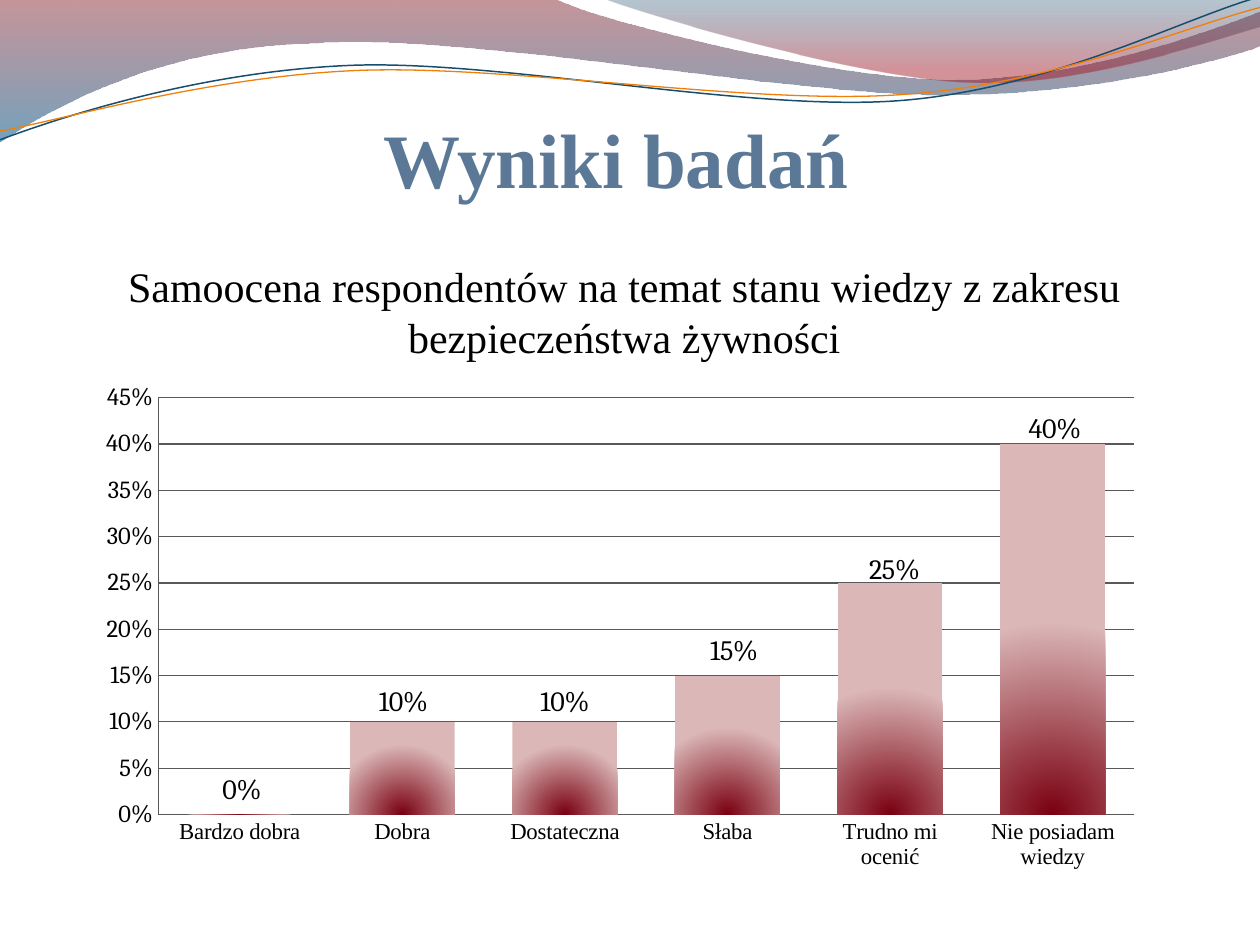
"""Build the survey results slide with its wave header and column chart."""
from lxml.etree import SubElement
from pptx import Presentation
from pptx.chart.data import CategoryChartData
from pptx.dml.color import RGBColor
from pptx.enum.chart import XL_CHART_TYPE as ChartType, XL_LABEL_POSITION as LabelPos
from pptx.enum.chart import XL_TICK_MARK as TickMark
from pptx.enum.text import MSO_ANCHOR as Anchor, PP_ALIGN as Align
from pptx.oxml import parse_xml
from pptx.oxml.ns import nsdecls, qn
from pptx.util import Inches, Pt

SERIF = "Times New Roman"
TITLE = "Wyniki badań"
QUESTION = "Samoocena respondentów na temat stanu wiedzy z zakresu bezpieczeństwa żywności"
ANSWERS = [
    ("Bardzo dobra", 0, (0.002, -0.088)),
    ("Dobra", 0.1, (0.001, -0.08)),
    ("Dostateczna", 0.1, (0, -0.08)),
    ("Słaba", 0.15, (0.006, -0.089)),
    ("Trudno mi ocenić", 0.25, (0.004, -0.066)),
    ("Nie posiadam wiedzy", 0.4, (0.002, -0.069)),
]
PLOT_AREA = {"x": 0.069, "y": 0.049, "w": 0.911, "h": 0.823}
BAR_STOPS = [(0, "7A0010", 100), (1, "DBB7B8", 100)]
BANDS = [
    ([(0, 0), (4.4, -0.01), (4.76, 0.17, 6.64, 0.63, 7.58, 0.63),
      (8.53, 0.63, 9.58, 0.26, 10, 0.09), (10.01, 0.36),
      (9.83, 0.44, 8.7, 0.76, 7.46, 0.75), (6.22, 0.75, 3.82, 0.28, 2.57, 0.34),
      (1.29, 0.36, 0.46, 0.83, -0.01, 1.13), (0, 0)],
     [(0, "7E1621", 45), (1, "005689", 55)]),
    ([(4.79, -0.01), (5.09, 0.11, 6.82, 0.62, 7.69, 0.65),
      (8.56, 0.69, 9.61, 0.32, 10, 0.21), (10, 0), (4.79, -0.01)],
     [(0, "094467", 30), (0.8, "A10F1F", 45)]),
]
STRANDS = [
    ([(0, 1.11), (0.48, 0.93, 1.58, 0.57, 2.77, 0.52),
      (3.95, 0.47, 5.93, 0.89, 7.13, 0.8), (8.33, 0.71, 9.38, 0.15, 9.98, -0.02)],
     "184E6D", 0.85),
    ([(0, 1.04), (0.47, 0.96, 1.64, 0.61, 2.83, 0.56),
      (4.03, 0.51, 5.97, 0.84, 7.17, 0.75), (8.36, 0.67, 9.41, 0.21, 10, 0.06)],
     "F07F09", 0.75),
]


def rgb(code):
    return RGBColor.from_string(code)


def set_font(font, size, face, color="000000", bold=False):
    font.size, font.name, font.bold = Pt(size), face, bold
    font.color.rgb = rgb(color)


def add_wave(slide, outline, close):
    start, *knots = [(Inches(part[i]), Inches(part[i + 1]))
                     for part in outline for i in range(0, len(part), 2)]
    builder = slide.shapes.build_freeform(*start)
    builder.add_line_segments(knots, close=close)
    wave = builder.convert_to_shape()
    wave.shadow.inherit = False
    segments = iter(list(wave.element.iter(qn("a:lnTo"))))
    for part in outline[1:]:
        segment = next(segments)
        if len(part) == 6:
            segment.tag = qn("a:cubicBezTo")
            for follower in (next(segments), next(segments)):
                segment.append(follower[0])
                follower.getparent().remove(follower)
    return wave


def set_gradient(fill, stops):
    fill.gradient()
    fill.gradient_angle = 270
    for stop, (position, color, opacity) in zip(fill.gradient_stops, stops):
        stop.position = position
        stop.color.rgb = rgb(color)


def add_opacity(gradient, stops):
    for color, stop in zip(gradient.iter(qn("a:srgbClr")), stops):
        SubElement(color, qn("a:alpha"), val=str(stop[2] * 1000))


def manual_layout(inner=False, **fractions):
    layout = parse_xml(f'<c:layout {nsdecls("c")}><c:manualLayout/></c:layout>')
    settings = {"layoutTarget": "inner", "xMode": "edge", "yMode": "edge"} if inner else {}
    for key, value in {**settings, **fractions}.items():
        SubElement(layout[0], qn(f"c:{key}"), val=str(value))
    return layout


def add_header(slide):
    for outline, stops in BANDS:
        band = add_wave(slide, outline, True)
        set_gradient(band.fill, stops)
        add_opacity(band.element.spPr.find(qn("a:gradFill")), stops)
        band.line.fill.background()
    for outline, color, width in STRANDS:
        strand = add_wave(slide, outline, False)
        strand.fill.background()
        strand.line.color.rgb = rgb(color)
        strand.line.width = Pt(width)


def add_texts(slide):
    title = slide.shapes.title
    title.left, title.top, title.width, title.height = map(Inches, (0.28, 0.84, 9.22, 0.78))
    frame = title.text_frame
    frame.text = TITLE
    frame.vertical_anchor = Anchor.BOTTOM
    frame.margin_left = frame.margin_right = frame.margin_bottom = 0
    frame.paragraphs[0].alignment = Align.CENTER
    set_font(frame.paragraphs[0].runs[0].font, 44, SERIF, "5B7896", True)

    question = slide.shapes.add_textbox(*map(Inches, (0.5, 2.02, 8.91, 4.9))).text_frame
    question.word_wrap = True
    question.text = QUESTION
    paragraph = question.paragraphs[0]
    paragraph.alignment = Align.CENTER
    paragraph.space_before = Pt(4.8)
    set_font(paragraph.runs[0].font, 24, SERIF)


def add_answer_chart(slide):
    data = CategoryChartData(number_format="0%")
    data.categories = [answer for answer, share, shift in ANSWERS]
    data.add_series("Series 1", [share for answer, share, shift in ANSWERS])
    chart = slide.shapes.add_chart(ChartType.COLUMN_STACKED,
                                   *map(Inches, (0.67, 2.96, 8.5, 4.02)), data).chart
    chart.has_legend = chart.has_title = False
    set_font(chart.font, 13, "Cambria")
    plot = chart.plots[0]
    plot_area = plot._element.getparent()
    for old in plot_area.findall(qn("c:layout")):
        plot_area.remove(old)
    plot_area.insert(0, manual_layout(True, **PLOT_AREA))

    shares = chart.value_axis
    shares.minimum_scale, shares.maximum_scale, shares.major_unit = 0, 0.45, 0.05
    shares.tick_labels.number_format = "0%"
    shares.tick_labels.number_format_is_linked = False
    for axis, size, face in ((shares, 14, "Cambria"), (chart.category_axis, 13, SERIF)):
        axis.major_tick_mark = axis.minor_tick_mark = TickMark.NONE
        set_font(axis.tick_labels.font, size, face)
    for line in (shares.format.line, chart.category_axis.format.line,
                 shares.major_gridlines.format.line):
        line.color.rgb = rgb("595959")
        line.width = Pt(0.75)

    plot.gap_width, plot.overlap, plot.vary_by_categories = 55, 100, False
    series = plot.series[0]
    set_gradient(series.format.fill, BAR_STOPS)
    gradient = next(series._element.iter(qn("a:gradFill")))
    gradient.replace(gradient.find(qn("a:lin")), parse_xml(
        f'<a:path {nsdecls("a")} path="circle">'
        '<a:fillToRect l="50000" t="100000" r="50000" b="0"/></a:path>'))

    labels = series.data_labels
    labels.show_value = True
    labels.position = LabelPos.INSIDE_END
    labels.number_format, labels.number_format_is_linked = "0%", False
    set_font(labels.font, 16, "Cambria")
    for index in range(len(ANSWERS)):
        label = series.points[index].data_label
        set_font(label.font, 16, "Cambria")
        label.position = LabelPos.INSIDE_END
    for (answer, share, (x, y)), label in zip(ANSWERS, series._element.iter(qn("c:dLbl"))):
        label.insert(1, manual_layout(x=x, y=y))


def main():
    deck = Presentation()
    deck.slide_width, deck.slide_height = Inches(10), Inches(7.5)
    slide = deck.slides.add_slide(deck.slide_layouts[5])
    add_header(slide)
    add_texts(slide)
    add_answer_chart(slide)
    deck.save("out.pptx")


if __name__ == "__main__":
    main()
